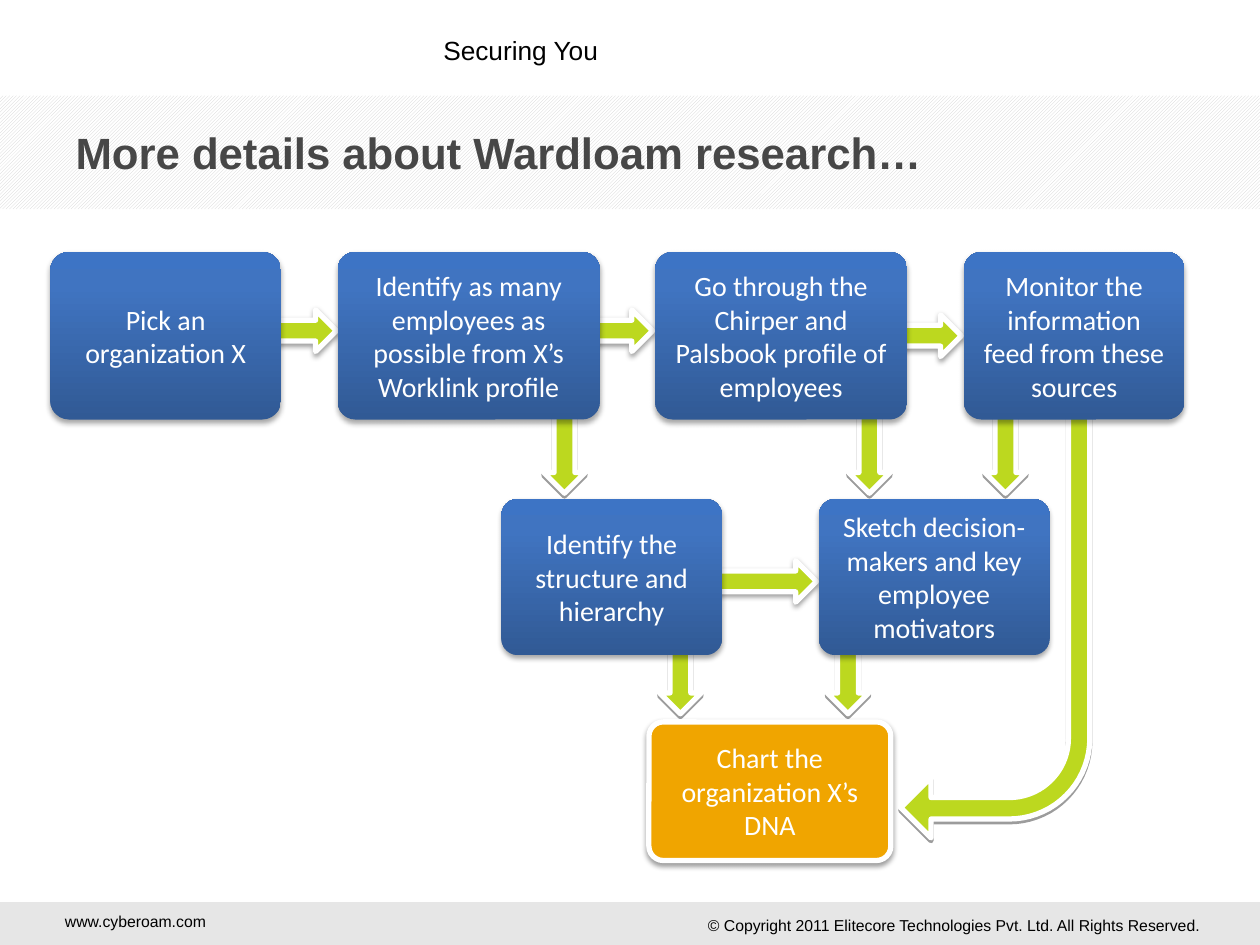
"""Build the slide on researching an organization through its employees."""
from copy import deepcopy
from dataclasses import dataclass
from math import cos, radians, sin

from lxml.etree import SubElement
from pptx import Presentation
from pptx.dml.color import RGBColor
from pptx.enum.dml import MSO_PATTERN
from pptx.enum.shapes import MSO_SHAPE
from pptx.enum.text import MSO_ANCHOR, PP_ALIGN
from pptx.oxml.ns import qn
from pptx.shapes.autoshape import Shape
from pptx.slide import Slide
from pptx.text.text import TextFrame
from pptx.util import Inches, Pt


@dataclass(frozen=True)
class Theme:
    heading_font: str = "Arial"
    step_font: str = "Calibri"
    title_size: float = 25
    step_size: float = 16
    slogan_size: float = 15
    footer_size: float = 9
    outline: float = 3
    black: str = "000000"
    white: str = "FFFFFF"
    title: str = "474747"
    stripe: str = "D1D1D1"
    footer: str = "C8C8C8"
    arrow: str = "BCD81F"
    result: str = "F0A500"
    step_stops: tuple = ((0, "315A95"), (0.8, "4074C1"), (1, "3D74C5"))


@dataclass(frozen=True)
class Step:
    text: str
    left: float
    top: float
    width: float
    height: float
    corner: float = 0.104
    is_result: bool = False


@dataclass(frozen=True)
class Arrow:
    left: float
    top: float
    length: float
    down: bool = False


THEME = Theme()
ARROW_THICKNESS = 0.33
TOP_ROW, MIDDLE_ROW = 2, 3.96

STEPS = (
    Step("Pick an organization X", 0.4, TOP_ROW, 1.83, 1.33, 0.111),
    Step("Identify as many employees as possible from X’s Worklink profile", 2.68, TOP_ROW, 2.08, 1.33),
    Step("Go through the Chirper and Palsbook profile of employees", 5.2, TOP_ROW, 2, 1.33),
    Step("Monitor the information feed from these sources", 7.65, TOP_ROW, 1.75, 1.33),
    Step("Identify the structure and hierarchy", 3.98, MIDDLE_ROW, 1.75, 1.24),
    Step("Sketch decision-makers and key employee motivators", 6.5, MIDDLE_ROW, 1.83, 1.24),
    Step("Chart the organization X’s DNA", 5.15, 5.73, 1.92, 1.1, is_result=True),
)

ARROWS = (
    *(Arrow(left, 5.1, 0.8, down=True) for left in (5, 6.33)),
    Arrow(5.65, 4.45, 0.83),
    *(Arrow(left, 3.35, 0.8, down=True) for left in (6.5, 7.58, 4.08)),
    Arrow(4.68, 2.46, 0.5),
    Arrow(7.13, 2.5, 0.5),
    Arrow(2.17, 2.46, 0.5),
)


def color(value: str) -> RGBColor:
    """Turn a hex string into a colour."""
    return RGBColor.from_string(value)


def write(frame: TextFrame, text: str, *, font: str, size: float, ink: str,
          bold: bool = False, align: PP_ALIGN = PP_ALIGN.LEFT,
          anchor: MSO_ANCHOR = MSO_ANCHOR.TOP, wrap: bool = False) -> None:
    """Put one formatted paragraph into a text frame."""
    frame.word_wrap = wrap
    frame.vertical_anchor = anchor
    para = frame.paragraphs[0]
    para.alignment = align
    span = para.add_run()
    span.text = text
    span.font.name = font
    span.font.size = Pt(size)
    span.font.bold = bold
    span.font.color.rgb = color(ink)


def add_label(page: Slide, text: str, left: float, top: float, width: float,
              height: float, **text_format) -> None:
    """Add an unwrapped text box."""
    box = page.shapes.add_textbox(Inches(left), Inches(top), Inches(width), Inches(height))
    write(box.text_frame, text, font=THEME.heading_font, ink=THEME.black, **text_format)


def add_shadow(shape: Shape, *, blur: float, distance: float, opacity: int) -> None:
    """Give a shape a downward shadow."""
    shape.shadow.inherit = False
    effects = shape._element.spPr.find(qn("a:effectLst"))
    shadow = SubElement(effects, qn("a:outerShdw"), blurRad=str(Pt(blur)),
                        dist=str(Pt(distance)), dir="5400000", rotWithShape="0")
    ink = SubElement(shadow, qn("a:srgbClr"), val=THEME.black)
    SubElement(ink, qn("a:alpha"), val=str(opacity * 1000))


def fill_outlined(shape: Shape, paint: str, blur: float) -> None:
    """Fill a shape, outline it in white and shade it."""
    shape.fill.solid()
    shape.fill.fore_color.rgb = color(paint)
    shape.line.color.rgb = color(THEME.white)
    shape.line.width = Pt(THEME.outline)
    add_shadow(shape, blur=blur, distance=1.6, opacity=38)


def fill_gradient(shape: Shape) -> None:
    """Fill a step with its vertical gradient."""
    shape.fill.gradient()
    shape.fill.gradient_angle = 90
    stop_list = shape._element.spPr.find(qn("a:gradFill")).find(qn("a:gsLst"))
    stop_list.append(deepcopy(stop_list[0]))
    for stop, (position, paint) in zip(shape.fill.gradient_stops, THEME.step_stops):
        stop.position = position
        stop.color.rgb = color(paint)
    shape.line.fill.background()
    add_shadow(shape, blur=3.1, distance=1.8, opacity=35)


def add_band(page: Slide, top: float, height: float) -> Shape:
    """Add a full-width band without outline."""
    band = page.shapes.add_shape(MSO_SHAPE.RECTANGLE, 0, Inches(top), Inches(10), Inches(height))
    band.shadow.inherit = False
    band.line.fill.background()
    return band


def add_arrow(page: Slide, arrow: Arrow) -> None:
    """Add a straight block arrow."""
    shape = page.shapes.add_shape(MSO_SHAPE.RIGHT_ARROW, Inches(arrow.left), Inches(arrow.top),
                                  Inches(arrow.length), Inches(ARROW_THICKNESS))
    shape.rotation = 90 if arrow.down else 0
    fill_outlined(shape, THEME.arrow, 0 if arrow.down else 3.1)


def add_bent_arrow(page: Slide) -> None:
    """Add the arrow that bends from the last source to the result."""
    def arc(radius: float, angles: range) -> list:
        return [(8.01 + radius * cos(radians(angle)), 5.86 + radius * sin(radians(angle)))
                for angle in angles]

    points = [(8.65, 2.87), *arc(0.64, range(0, 91, 5)),
              (7.39, 6.5), (7.39, 6.65), (7.15, 6.41), (7.39, 6.17), (7.39, 6.33),
              *arc(0.47, range(90, -1, -5)), (8.48, 2.87)]
    start, *rest = [(Inches(x), Inches(y)) for x, y in points]
    builder = page.shapes.build_freeform(*start)
    builder.add_line_segments(rest, close=True)
    fill_outlined(builder.convert_to_shape(), THEME.arrow, 0)


def add_step(page: Slide, step: Step) -> None:
    """Add a rounded box with its text."""
    box = page.shapes.add_shape(MSO_SHAPE.ROUNDED_RECTANGLE, Inches(step.left), Inches(step.top),
                                Inches(step.width), Inches(step.height))
    box.adjustments[0] = step.corner
    if step.is_result:
        fill_outlined(box, THEME.result, 3.1)
    else:
        fill_gradient(box)
    write(box.text_frame, step.text, font=THEME.step_font, size=THEME.step_size, ink=THEME.white,
          align=PP_ALIGN.CENTER, anchor=MSO_ANCHOR.MIDDLE, wrap=True)


def add_frame(page: Slide) -> None:
    """Add the bands, slogan, footer and title."""
    footer = add_band(page, 7.16, 0.35)
    footer.fill.solid()
    footer.fill.fore_color.rgb = color(THEME.footer)
    ink = footer._element.spPr.find(qn("a:solidFill"))[0]
    SubElement(ink, qn("a:alpha"), val="45000")
    add_label(page, "www.cyberoam.com", 0.41, 7.19, 1.33, 0.25,
              size=THEME.footer_size, align=PP_ALIGN.CENTER)
    add_label(page, "© Copyright 2011 Elitecore Technologies Pvt. Ltd. All Rights Reserved.",
              5.5, 7.22, 4.14, 0.25, size=THEME.footer_size, align=PP_ALIGN.CENTER)
    add_label(page, "Securing You", 3.42, 0.22, 1.45, 0.35, size=THEME.slogan_size)
    stripes = add_band(page, 0.76, 0.9)
    stripes.fill.patterned()
    stripes.fill.pattern = MSO_PATTERN.DARK_UPWARD_DIAGONAL
    stripes.fill.fore_color.rgb = color(THEME.stripe)
    stripes.fill.back_color.rgb = color(THEME.white)
    title = page.shapes.title
    title.left, title.top, title.width, title.height = map(Inches, (0.5, 0.95, 6.95, 0.52))
    page.shapes._spTree.append(title._element)
    write(title.text_frame, "More details about Wardloam research…", font=THEME.heading_font,
          size=THEME.title_size, ink=THEME.title, bold=True)


def main() -> None:
    """Build and save the deck."""
    deck = Presentation()
    deck.slide_width, deck.slide_height = Inches(10), Inches(7.5)
    page = deck.slides.add_slide(deck.slide_layouts[5])
    add_frame(page)
    add_bent_arrow(page)
    for arrow in ARROWS:
        add_arrow(page, arrow)
    for step in STEPS:
        add_step(page, step)
    deck.save("out.pptx")


if __name__ == "__main__":
    main()
